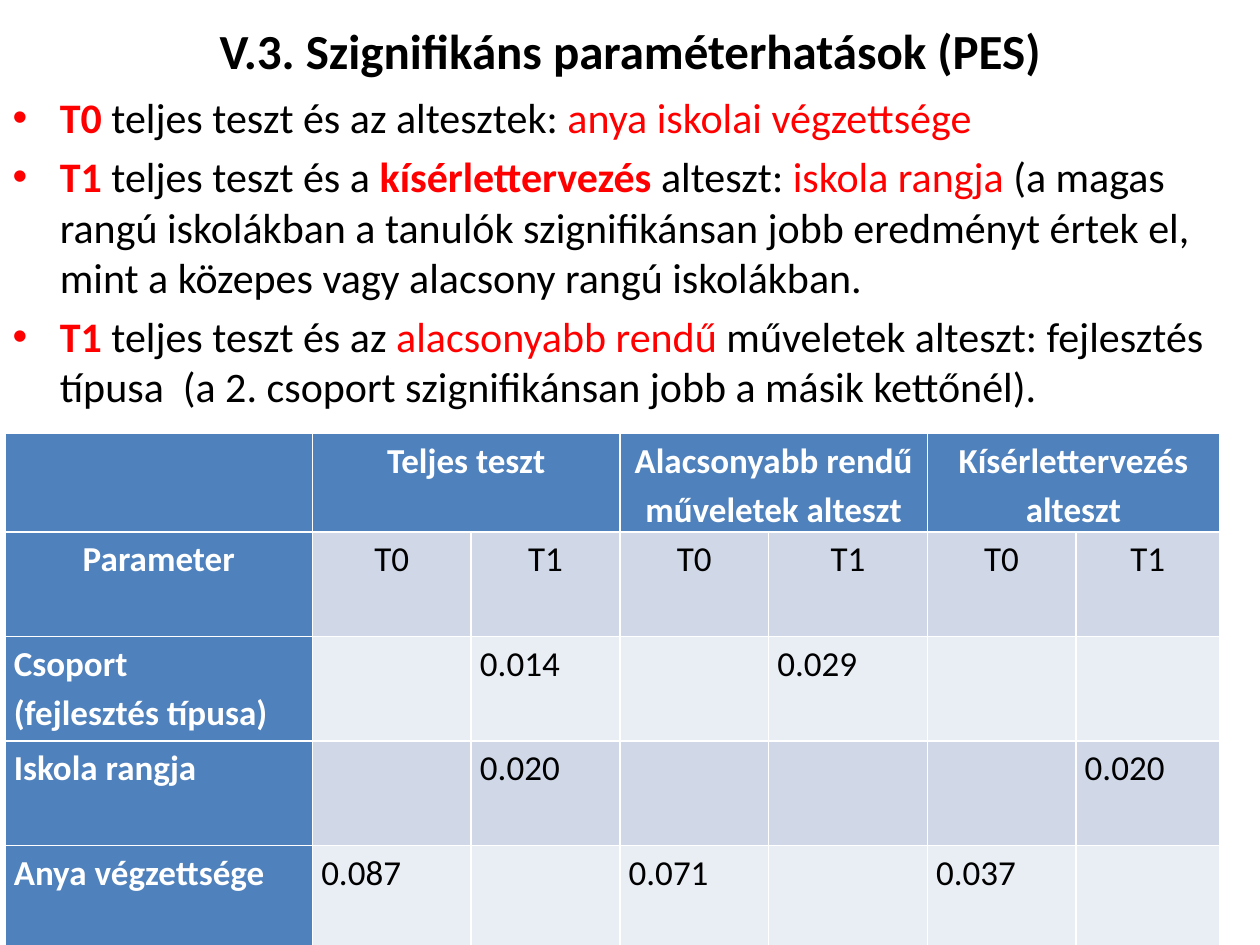
from dataclasses import dataclass

from pptx import Presentation
from pptx import util as u
from pptx.dml.color import RGBColor
from pptx.enum import text

BLACK = RGBColor(0x00, 0x00, 0x00)
WHITE = RGBColor(0xFF, 0xFF, 0xFF)
RED = RGBColor(0xFF, 0x00, 0x00)
BLUE = RGBColor(0x4F, 0x81, 0xBD)
BANDS = (RGBColor(0xD0, 0xD8, 0xE8), RGBColor(0xE9, 0xED, 0xF4))
FACE = "Calibri"


@dataclass
class Part:
    """A stretch of text in one format."""
    words: str
    color: RGBColor = BLACK
    bold: bool = False


@dataclass
class Row:
    """A table row: its label and the six values beside it."""
    label: str
    vals: tuple[str, ...]
    mid: bool = False


POINTS = [
    [Part("T0", RED, True), Part(" teljes teszt és az altesztek: "),
     Part("anya iskolai végzettsége", RED)],
    [Part("T1", RED, True), Part(" teljes teszt és a "),
     Part("kísérlettervezés ", RED, True), Part("alteszt: "),
     Part("iskola rangja ", RED),
     Part("(a magas rangú iskolákban a tanulók szignifikánsan jobb eredményt "
          "értek el, mint a közepes vagy alacsony rangú iskolákban.")],
    [Part("T1", RED, True), Part(" teljes teszt és az "),
     Part("alacsonyabb rendű ", RED),
     Part("műveletek alteszt: fejlesztés típusa  (a 2. csoport "
          "szignifikánsan jobb a másik kettőnél).")],
]
HEADS = ("Teljes teszt", "Alacsonyabb rendű műveletek alteszt",
         "Kísérlettervezés alteszt")
ROWS = [
    Row("Parameter", ("T0", "T1") * 3, mid=True),
    Row("Csoport\n(fejlesztés típusa)", ("", "0.014", "", "0.029", "", "")),
    Row("Iskola rangja", ("", "0.020", "", "", "", "0.020")),
    Row("Anya végzettsége", ("0.087", "", "0.071", "", "0.037", "")),
]
WIDTHS = (2.44, 1.26, 1.18, 1.18, 1.26, 1.18, 1.14)
HEIGHTS = (0.72,) + (0.83,) * len(ROWS)


def style(font, size: float, color: RGBColor, bold: bool) -> None:
    font.name, font.size, font.bold = FACE, u.Pt(size), bold
    font.color.rgb = color


def place(shape, left: float, top: float, width: float, height: float) -> None:
    shape.left, shape.top = u.Inches(left), u.Inches(top)
    shape.width, shape.height = u.Inches(width), u.Inches(height)


def fill_cell(cell, words: str, fill: RGBColor, mid: bool) -> None:
    cell.fill.solid()
    cell.fill.fore_color.rgb = fill
    if not words:
        return
    cell.margin_left = cell.margin_right = u.Inches(0.07)
    cell.margin_top = cell.margin_bottom = 0
    cell.text_frame.text = words
    head = fill == BLUE
    for para in cell.text_frame.paragraphs:
        para.line_spacing = 1.15
        if mid:
            para.alignment = text.PP_ALIGN.CENTER
        for run in para.runs:
            style(run.font, 20, WHITE if head else BLACK, head)


def add_title(slide) -> None:
    title = slide.shapes.title
    place(title, 0.5, 0, 9, 0.8)
    title.text_frame.text = "V.3. Szignifikáns paraméterhatások (PES)"
    style(title.text_frame.paragraphs[0].runs[0].font, 28, BLACK, True)


def add_points(slide) -> None:
    body = slide.placeholders[1]
    place(body, 0, 0.68, 10, 5.9)
    frame = body.text_frame
    frame.auto_size = text.MSO_AUTO_SIZE.NONE
    for i, parts in enumerate(POINTS):
        para = frame.add_paragraph() if i else frame.paragraphs[0]
        for part in parts:
            run = para.add_run()
            run.text = part.words
            style(run.font, 24, part.color, part.bold)


def add_grid(slide) -> None:
    table = slide.shapes.add_table(
        len(HEIGHTS), len(WIDTHS), u.Inches(0.04), u.Inches(3.44),
        u.Inches(sum(WIDTHS)), u.Inches(sum(HEIGHTS))).table
    table.first_col = True
    for col, width in zip(table.columns, WIDTHS):
        col.width = u.Inches(width)
    for row, height in zip(table.rows, HEIGHTS):
        row.height = u.Inches(height)

    # Header row: each head spans a T0 and T1 pair
    fill_cell(table.cell(0, 0), "", BLUE, True)
    for i, head in enumerate(HEADS):
        left = 1 + 2 * i
        table.cell(0, left).merge(table.cell(0, left + 1))
        fill_cell(table.cell(0, left), head, BLUE, True)

    # Parameter rows in alternating bands
    for r, row in enumerate(ROWS, 1):
        fill_cell(table.cell(r, 0), row.label, BLUE, row.mid)
        for c, val in enumerate(row.vals, 1):
            fill_cell(table.cell(r, c), val, BANDS[(r - 1) % 2], row.mid)


def main() -> None:
    deck = Presentation()
    deck.slide_width, deck.slide_height = u.Inches(10), u.Inches(7.5)
    slide = deck.slides.add_slide(deck.slide_layouts[1])
    add_title(slide)
    add_points(slide)
    add_grid(slide)
    deck.save("out.pptx")


if __name__ == "__main__":
    main()
